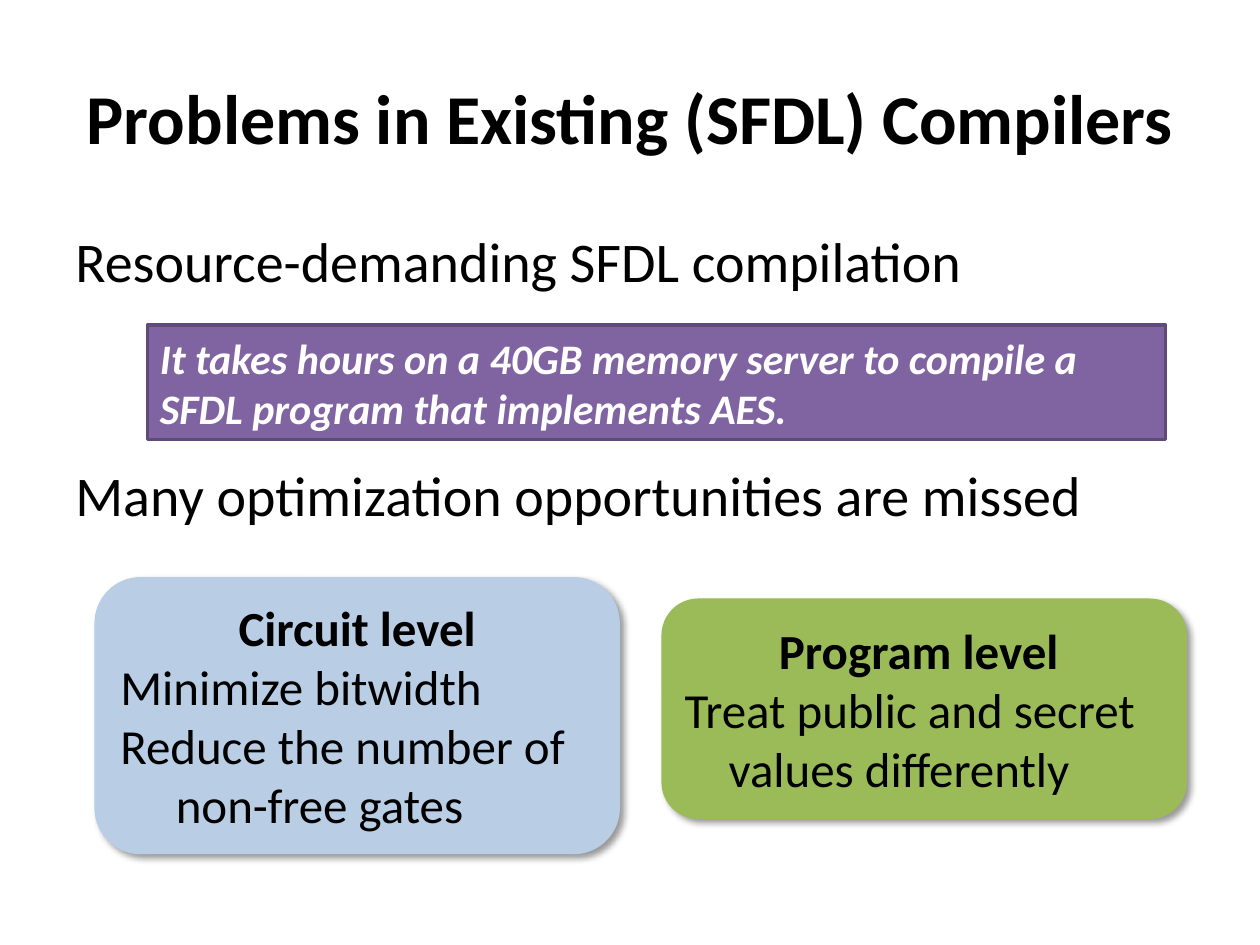
from lxml import etree
from pptx import Presentation
from pptx.dml.color import RGBColor
from pptx.enum.shapes import MSO_SHAPE
from pptx.enum.text import MSO_ANCHOR, PP_ALIGN
from pptx.oxml.ns import qn
from pptx.util import Inches, Pt

RECTANGLE = MSO_SHAPE.RECTANGLE
ROUNDED = MSO_SHAPE.ROUNDED_RECTANGLE
TOP, MIDDLE = MSO_ANCHOR.TOP, MSO_ANCHOR.MIDDLE
LEFT, CENTER = PP_ALIGN.LEFT, PP_ALIGN.CENTER
FONT = "Calibri"
COLORS = {
    "text": "000000",
    "light": "FFFFFF",
    "quote": "8064A2",
    "quote_line": "5F4A78",
    "circuit": "B9CDE5",
    "program": "9BBB59",
}


def color(name):
    """Return the named colour."""
    return RGBColor.from_string(COLORS[name])


def write(para, text, size, ink="text", bold=False, italic=False, align=LEFT):
    """Fill a paragraph with one formatted run."""
    para.alignment = align
    span = para.add_run()
    span.text = text
    font = span.font
    font.name, font.size, font.bold, font.italic = FONT, Pt(size), bold, italic
    font.color.rgb = color(ink)


def add_shadow(shape):
    """Give a shape a soft shadow to the lower right."""
    effects = shape._element.spPr.find(qn("a:effectLst"))
    shadow = etree.SubElement(effects, qn("a:outerShdw"), blurRad=str(Pt(4)),
                              dist=str(Pt(3)), dir="2700000", algn="tl", rotWithShape="0")
    tint = etree.SubElement(shadow, qn("a:srgbClr"), val=COLORS["text"])
    etree.SubElement(tint, qn("a:alpha"), val="40000")


def add_block(page, kind, bounds, fill):
    """Add a filled shape without line or shadow."""
    block = page.shapes.add_shape(kind, *map(Inches, bounds))
    block.shadow.inherit = False
    block.fill.solid()
    block.fill.fore_color.rgb = color(fill)
    block.line.fill.background()
    block.text_frame.word_wrap = True
    block.text_frame.vertical_anchor = MIDDLE
    return block


def add_title(page, text):
    """Place and fill the title placeholder."""
    title = page.shapes.title
    title.left, title.top, title.width, title.height = map(Inches, (0.5, 0.3, 9, 1.25))
    title.text_frame.vertical_anchor = MIDDLE
    write(title.text_frame.paragraphs[0], text, 40, bold=True, align=CENTER)


def add_points(page, first, second):
    """Add the two main points, spaced to leave room for the quote."""
    box = page.shapes.add_textbox(*map(Inches, (0.5, 1.75, 9, 4.95)))
    frame = box.text_frame
    frame.word_wrap = True
    frame.vertical_anchor = TOP
    write(frame.paragraphs[0], first, 32)
    para = frame.add_paragraph()
    para.space_before = Pt(95)
    write(para, second, 32)


def add_quote(page, text):
    """Add the outlined quote bar."""
    quote = add_block(page, RECTANGLE, (1.17, 2.58, 8.08, 0.91), "quote")
    quote.line.color.rgb = color("quote_line")
    quote.line.width = Pt(2)
    write(quote.text_frame.paragraphs[0], text, 24, "light", bold=True, italic=True)


def add_card(page, bounds, fill, heading, lines, indent):
    """Add a rounded card whose last line is indented."""
    card = add_block(page, ROUNDED, bounds, fill)
    add_shadow(card)
    frame = card.text_frame
    write(frame.paragraphs[0], heading, 28, bold=True, align=CENTER)
    for line in lines:
        para = frame.add_paragraph()
        write(para, line, 28)
    para._p.get_or_add_pPr().set("marL", str(Inches(indent)))


def main():
    """Build and save the slide."""
    deck = Presentation()
    deck.slide_width, deck.slide_height = Inches(10), Inches(7.5)
    page = deck.slides.add_slide(deck.slide_layouts[5])
    add_title(page, "Problems in Existing (SFDL) Compilers")
    add_points(page, "Resource-demanding SFDL compilation",
               "Many optimization opportunities are missed")
    add_quote(page, "It takes hours on a 40GB memory server to compile a "
                    "SFDL program that implements AES.")
    add_card(page, (0.75, 4.58, 4.17, 2.2), "circuit", "Circuit level",
             ["Minimize bitwidth", "Reduce the number of", "non-free gates"], 0.44)
    add_card(page, (5.25, 4.75, 4.17, 1.75), "program", "Program level ",
             ["Treat public and secret", "values differently"], 0.35)
    deck.save("out.pptx")


if __name__ == "__main__":
    main()
